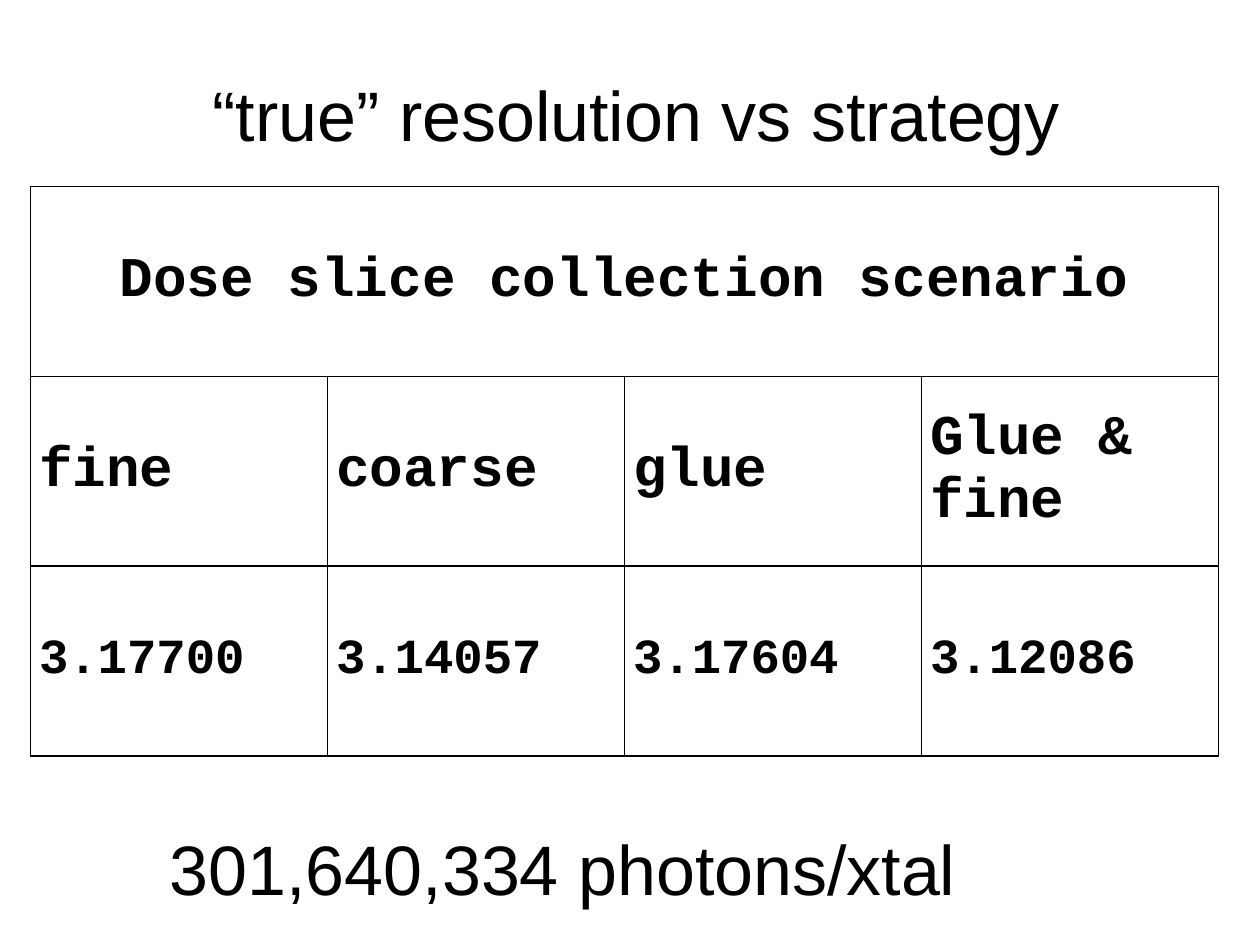
from lxml import etree
from pptx import Presentation
from pptx.dml.color import RGBColor
from pptx.enum.text import MSO_ANCHOR, MSO_AUTO_SIZE, PP_ALIGN
from pptx.oxml.ns import qn
from pptx.util import Inches, Pt

LEFT, CENTER = PP_ALIGN.LEFT, PP_ALIGN.CENTER
MIDDLE = MSO_ANCHOR.MIDDLE
GROW = MSO_AUTO_SIZE.SHAPE_TO_FIT_TEXT
BLACK, WHITE = "000000", "FFFFFF"
HEADING = "Dose slice collection scenario"
STRATEGIES = ["fine", "coarse", "glue", "Glue & fine"]
RESOLUTIONS = ["3.17700", "3.14057", "3.17604", "3.12086"]


def rgb(value):
    return RGBColor.from_string(value)


def write_text(tf, text, size=40, font="Arial", color=BLACK, bold=False, align=LEFT):
    p = tf.paragraphs[0]
    p.alignment = align
    r = p.add_run()
    r.text = text
    r.font.size = Pt(size)
    r.font.name = font
    r.font.bold = bold
    r.font.color.rgb = rgb(color)


def add_label(s, text, left, top, width, height):
    sp = s.shapes.add_textbox(Inches(left), Inches(top), Inches(width), Inches(height))
    tf = sp.text_frame
    tf.word_wrap = False
    tf.auto_size = GROW
    write_text(tf, text)


def set_borders(cell, color=BLACK, width=1):
    props = cell._tc.get_or_add_tcPr()
    for i, side in enumerate(("lnL", "lnR", "lnT", "lnB")):
        line = etree.Element(qn(f"a:{side}"), w=str(Pt(width)))
        fill = etree.SubElement(line, qn("a:solidFill"))
        etree.SubElement(fill, qn("a:srgbClr"), val=color)
        props.insert(i, line)


def format_cell(cell):
    cell.fill.solid()
    cell.fill.fore_color.rgb = rgb(WHITE)
    cell.vertical_anchor = MIDDLE
    cell.margin_left = cell.margin_right = Inches(0.07)
    cell.margin_top = cell.margin_bottom = Inches(0.04)
    set_borders(cell)


def add_resolution_table(s):
    rows = [([HEADING], 32, CENTER), (STRATEGIES, 32, LEFT), (RESOLUTIONS, 28, LEFT)]
    frame = s.shapes.add_table(
        len(rows), len(STRATEGIES), Inches(0.24), Inches(1.48), Inches(9.43), Inches(4.52)
    )
    table = frame.table
    table.first_row = table.horz_banding = False
    for cell in table.iter_cells():
        format_cell(cell)
    table.cell(0, 0).merge(table.cell(0, len(STRATEGIES) - 1))
    for i, (texts, size, align) in enumerate(rows):
        for j, text in enumerate(texts):
            write_text(table.cell(i, j).text_frame, text, size=size,
                       font="Courier New", bold=True, align=align)


def main():
    prs = Presentation()
    prs.slide_width, prs.slide_height = Inches(10), Inches(7.5)
    s = prs.slides.add_slide(prs.slide_layouts[6])
    add_resolution_table(s)
    add_label(s, "“true” resolution vs strategy", 1.59, 0.52, 7, 0.77)
    add_label(s, "301,640,334 photons/xtal", 1.25, 6.5, 6.5, 0.77)
    prs.save("out.pptx")


if __name__ == "__main__":
    main()
